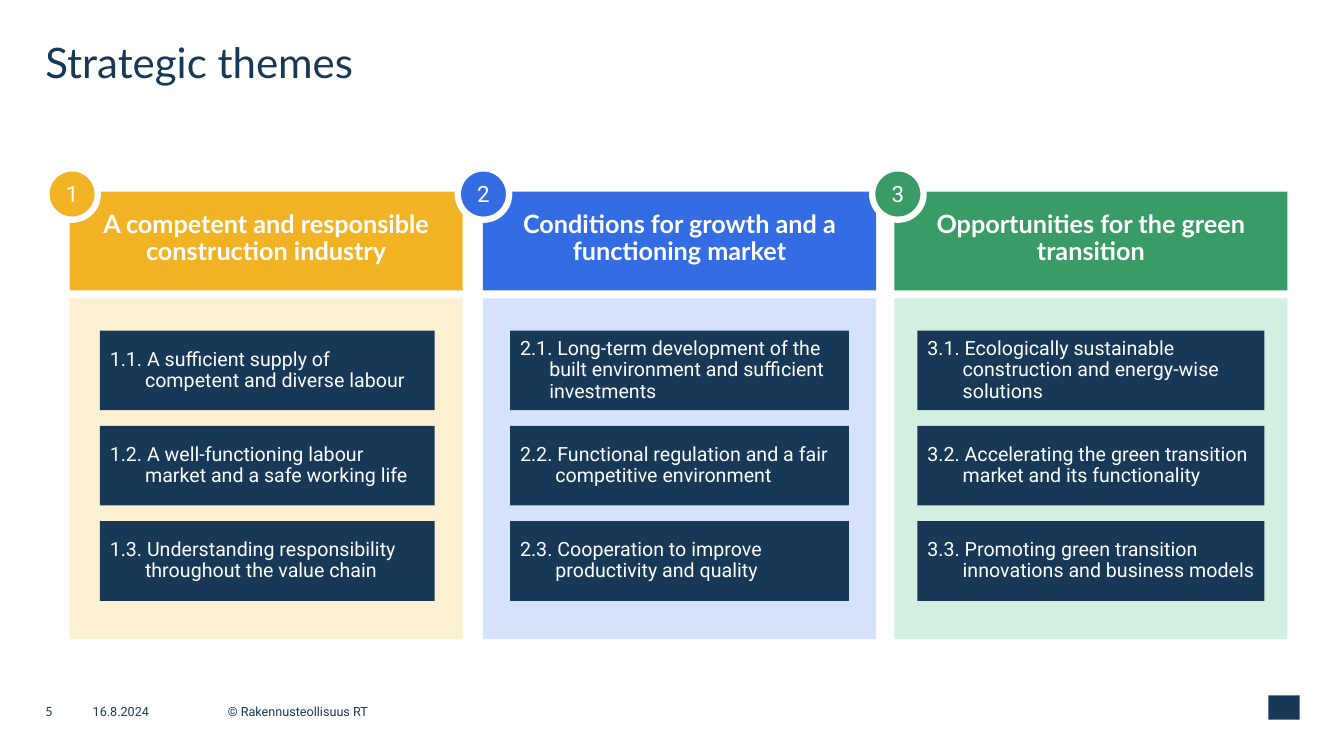
from dataclasses import dataclass

from pptx import Presentation
from pptx.dml.color import RGBColor
from pptx.enum.shapes import MSO_SHAPE
from pptx.enum.text import MSO_ANCHOR, MSO_AUTO_SIZE, PP_ALIGN
from pptx.shapes.autoshape import Shape
from pptx.slide import Slide
from pptx.text.text import TextFrame
from pptx.util import Inches, Pt


@dataclass(frozen=True)
class Theme:
    navy: str = "183858"
    white: str = "FFFFFF"
    heading_font: str = "Lato"
    body_font: str = "Roboto"
    title_size: int = 30
    header_size: int = 18
    badge_size: int = 16
    card_size: int = 14
    footer_size: int = 9


@dataclass(frozen=True)
class Box:
    left: float
    top: float
    width: float
    height: float


@dataclass(frozen=True)
class TextStyle:
    font: str
    size: int
    color: str
    bold: bool = False
    align: PP_ALIGN = PP_ALIGN.LEFT
    anchor: MSO_ANCHOR = MSO_ANCHOR.MIDDLE
    line_spacing: float = 1.0
    margins: tuple[float, float, float, float] = (0.1, 0.05, 0.1, 0.05)


@dataclass(frozen=True)
class Card:
    text: str
    indent: float = 0.35


@dataclass(frozen=True)
class Column:
    heading: str
    color: str
    tint: str
    left: float
    badge_left: float
    card_left: float
    card_width: float
    cards: tuple[Card, ...]


@dataclass(frozen=True)
class FooterItem:
    text: str
    left: float
    width: float
    font: str


THEME = Theme()
NO_MARGINS = (0, 0, 0, 0)
TITLE_STYLE = TextStyle(THEME.heading_font, THEME.title_size, THEME.navy,
                        anchor=MSO_ANCHOR.TOP, margins=NO_MARGINS)
HEADER_STYLE = TextStyle(THEME.heading_font, THEME.header_size, THEME.white, bold=True,
                         align=PP_ALIGN.CENTER, anchor=MSO_ANCHOR.TOP, line_spacing=0.9,
                         margins=(0.16, 0.2, 0.16, 0.05))
BADGE_STYLE = TextStyle(THEME.body_font, THEME.badge_size, THEME.white,
                        align=PP_ALIGN.CENTER)
CARD_STYLE = TextStyle(THEME.body_font, THEME.card_size, THEME.white, line_spacing=0.9)

COLUMN_WIDTH = 3.9
HEADER_TOP, HEADER_HEIGHT = 1.9, 0.98
PANEL_TOP, PANEL_HEIGHT = 2.96, 3.38
BADGE_TOP, BADGE_SIZE = 1.67, 0.51
CARD_TOP, CARD_HEIGHT, CARD_PITCH = 3.28, 0.79, 0.945

COLUMNS = (
    Column("A competent and responsible construction industry", "F1B323", "FCF0D3",
           0.69, 0.46, 0.99, 3.32, (
               Card("1.1. A sufficient supply of competent and diverse labour"),
               Card("1.2. A well-functioning labour market and a safe working life"),
               Card("1.3. Understanding responsibility throughout the value chain"))),
    Column("Conditions for growth and a functioning market", "346DE3", "D6E2F9",
           4.79, 4.54, 5.06, 3.36, (
               Card("2.1. Long-term development of the built environment "
                    "and sufficient investments", 0.29),
               Card("2.2. Functional regulation and a fair competitive environment"),
               Card("2.3. Cooperation to improve productivity and quality"))),
    Column("Opportunities for the green transition", "399B65", "D3EFE0",
           8.87, 8.65, 9.1, 3.44, (
               Card("3.1. Ecologically sustainable construction and energy-wise solutions"),
               Card("3.2. Accelerating the green transition market and its functionality"),
               Card("3.3. Promoting green transition innovations and business models"))),
)

FOOTER = (
    FooterItem("5", 0.45, 0.47, THEME.heading_font),
    FooterItem("16.8.2024", 0.92, 1.34, THEME.body_font),
    FooterItem("© Rakennusteollisuus RT", 2.26, 9.76, THEME.body_font),
)


def write_text(frame: TextFrame, text: str, style: TextStyle) -> None:
    frame.word_wrap = True
    frame.auto_size = MSO_AUTO_SIZE.NONE
    frame.vertical_anchor = style.anchor
    (frame.margin_left, frame.margin_top,
     frame.margin_right, frame.margin_bottom) = map(Inches, style.margins)
    paragraph = frame.paragraphs[0]
    paragraph.text = text
    paragraph.alignment = style.align
    paragraph.line_spacing = style.line_spacing
    paragraph.font.name = style.font
    paragraph.font.size = Pt(style.size)
    paragraph.font.bold = style.bold
    paragraph.font.color.rgb = RGBColor.from_string(style.color)


def inches(box: Box) -> tuple[Inches, Inches, Inches, Inches]:
    return Inches(box.left), Inches(box.top), Inches(box.width), Inches(box.height)


def add_block(slide: Slide, box: Box, color: str,
              kind: MSO_SHAPE = MSO_SHAPE.RECTANGLE) -> Shape:
    shape = slide.shapes.add_shape(kind, *inches(box))
    shape.shadow.inherit = False
    shape.fill.solid()
    shape.fill.fore_color.rgb = RGBColor.from_string(color)
    shape.line.fill.background()
    return shape


def add_title(slide: Slide, text: str) -> None:
    title = slide.shapes.title
    title.left, title.top, title.width, title.height = inches(Box(0.45, 0.36, 12.44, 1.11))
    write_text(title.text_frame, text, TITLE_STYLE)


def add_card(slide: Slide, card: Card, box: Box) -> None:
    shape = add_block(slide, box, THEME.navy)
    write_text(shape.text_frame, card.text, CARD_STYLE)
    properties = shape.text_frame.paragraphs[0]._p.get_or_add_pPr()
    properties.set("marL", str(Inches(card.indent)))
    properties.set("indent", str(-Inches(card.indent)))


def add_column(slide: Slide, number: int, column: Column) -> None:
    add_block(slide, Box(column.left, PANEL_TOP, COLUMN_WIDTH, PANEL_HEIGHT), column.tint)
    for row, card in enumerate(column.cards):
        add_card(slide, card, Box(column.card_left, CARD_TOP + row * CARD_PITCH,
                                  column.card_width, CARD_HEIGHT))
    header = add_block(slide, Box(column.left, HEADER_TOP, COLUMN_WIDTH, HEADER_HEIGHT),
                       column.color)
    write_text(header.text_frame, column.heading, HEADER_STYLE)
    badge = add_block(slide, Box(column.badge_left, BADGE_TOP, BADGE_SIZE, BADGE_SIZE),
                      column.color, MSO_SHAPE.OVAL)
    badge.line.color.rgb = RGBColor.from_string(THEME.white)
    badge.line.width = Pt(4.5)
    write_text(badge.text_frame, str(number), BADGE_STYLE)


def add_footer_item(slide: Slide, item: FooterItem) -> None:
    text_box = slide.shapes.add_textbox(*inches(Box(item.left, 6.98, item.width, 0.16)))
    style = TextStyle(item.font, THEME.footer_size, THEME.navy, margins=NO_MARGINS)
    write_text(text_box.text_frame, item.text, style)


def main() -> None:
    presentation = Presentation()
    presentation.slide_width = Inches(13.33)
    presentation.slide_height = Inches(7.5)
    slide = presentation.slides.add_slide(presentation.slide_layouts.get_by_name("Title Only"))
    add_title(slide, "Strategic themes")
    for number, column in enumerate(COLUMNS, start=1):
        add_column(slide, number, column)
    for item in FOOTER:
        add_footer_item(slide, item)
    add_block(slide, Box(12.58, 6.9, 0.31, 0.24), THEME.navy)
    presentation.save("out.pptx")


if __name__ == "__main__":
    main()
